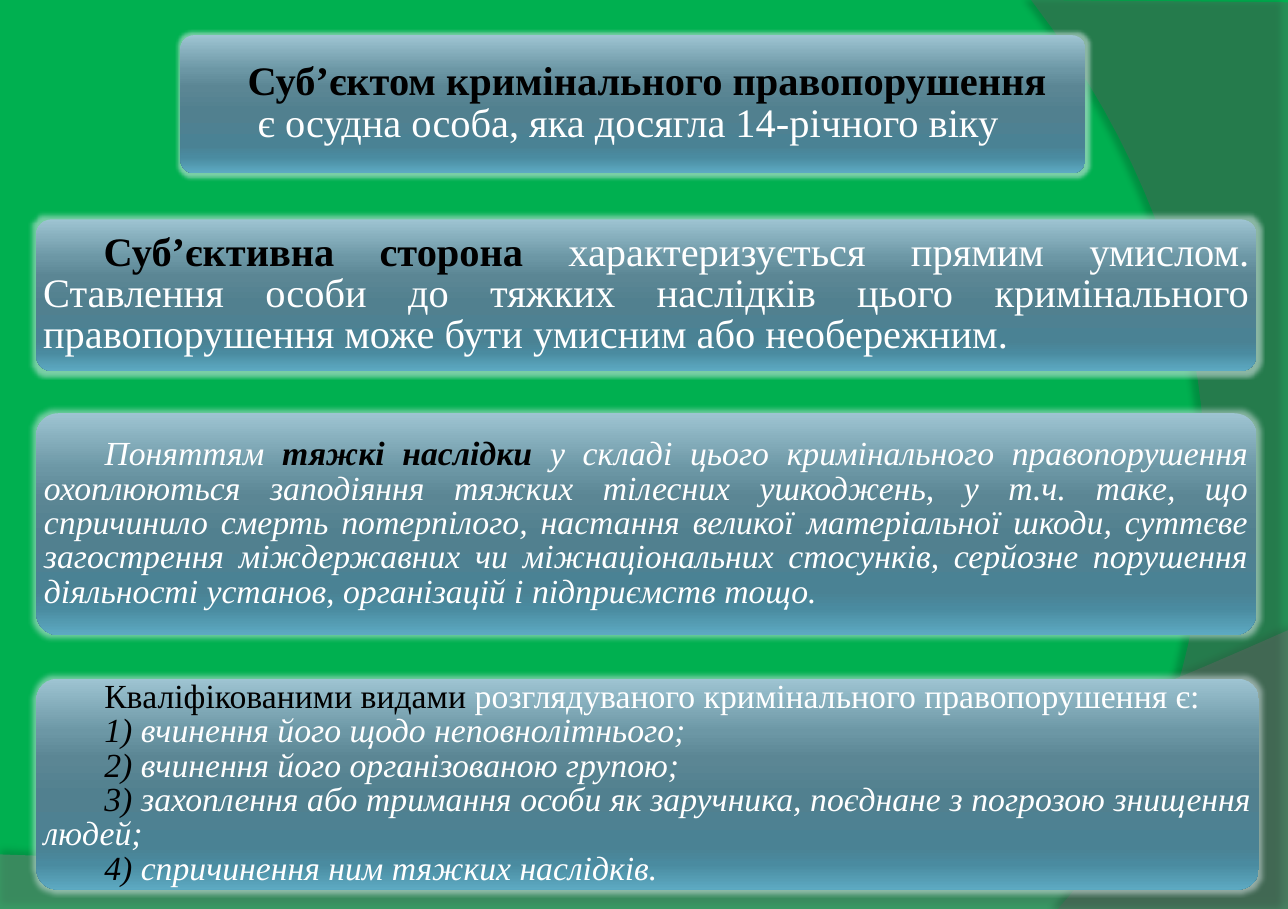
from lxml import etree
from pptx import Presentation
from pptx.dml.color import RGBColor
from pptx.enum.shapes import MSO_SHAPE
from pptx.enum.text import MSO_ANCHOR, PP_ALIGN
from pptx.oxml import parse_xml
from pptx.oxml.ns import nsdecls, qn
from pptx.util import Pt

ROUND = MSO_SHAPE.ROUNDED_RECTANGLE
MIDDLE = MSO_ANCHOR.MIDDLE
JUSTIFY = PP_ALIGN.JUSTIFY
WIDE, HIGH = 765.4, 540

COLORS = {"back": "00B050", "floor": "7F7F7F", "side": "5E5E5E",
          "shade": "000000", "glow": "DDE8EC", "key": "000000", "body": "FFFFFF"}
STOPS = {0: "9EC4D2", 25: "6C97A5", 38: "5B8694", 55: "51808F",
         80: "4A8294", 88: "4A8BA0", 100: "5DAAC2"}


def color_xml(color, alpha):
    return (f'<a:srgbClr val="{color}"><a:alpha val="{alpha * 1000}"/></a:srgbClr>')


def add_effect(shape, tag, attrs, color, alpha):
    shape.shadow.inherit = False
    effects = shape._element.spPr.find(qn("a:effectLst"))
    effects.append(parse_xml(f'<a:{tag} {nsdecls("a")} {attrs}>'
                             f'{color_xml(color, alpha)}</a:{tag}>'))


deck = Presentation()
deck.slide_width, deck.slide_height = Pt(WIDE), Pt(HIGH)
slide = deck.slides.add_slide(deck.slide_layouts[6])
slide.background.fill.solid()
slide.background.fill.fore_color.rgb = RGBColor.from_string(COLORS["back"])

# Curved backdrop: straight corners, then a Bezier from the last corner
waves = [
    ("floor", 45, [(0, 507.6), (0, HIGH), (WIDE, HIGH), (WIDE, 374.4)],
     [(427.7, 524.9), (298.8, 517.7), (0, 507.6)], 35, 3.5, 270),
    ("side", 40, [(WIDE, 1.4), (WIDE, HIGH), (628.6, HIGH)],
     [(715.7, 445.7), (779, 216), (612.7, 0)], 45, 4, 180),
]
STEPS = 40
for name, alpha, corners, curve, dark, dist, angle in waves:
    bend = [corners[-1]] + curve
    points = corners[1:]
    for step in range(1, STEPS + 1):
        t = step / STEPS
        parts = ((1 - t) ** 3, 3 * t * (1 - t) ** 2, 3 * t * t * (1 - t), t ** 3)
        points.append(tuple(sum(w * p[axis] for w, p in zip(parts, bend))
                            for axis in (0, 1)))
    build = slide.shapes.build_freeform(Pt(corners[0][0]), Pt(corners[0][1]))
    build.add_line_segments([(Pt(x), Pt(y)) for x, y in points], close=True)
    wave = build.convert_to_shape()
    wave.fill.solid()
    wave.fill.fore_color.rgb = RGBColor.from_string(COLORS[name])
    fill = wave._element.spPr.find(qn("a:solidFill"))
    etree.SubElement(fill[0], qn("a:alpha"), val=str(alpha * 1000))
    wave.line.fill.background()
    add_effect(wave, "outerShdw",
               f'blurRad="{Pt(4)}" dist="{Pt(dist)}" dir="{angle * 60000}"',
               COLORS["shade"], dark)

# Run formats
plain = {"bold": False, "italic": False}
bold = {"bold": True, "italic": False}
slant = {"bold": False, "italic": True}
strong = {"bold": True, "italic": True}

# Panels: place, text size, inset, paragraphs of (first indent, runs)
kinds = ["вчинення його щодо неповнолітнього;",
         "вчинення його організованою групою;",
         "захоплення або тримання особи як заручника, поєднане з погрозою "
         "знищення людей;",
         "спричинення ним тяжких наслідків."]
panels = [
    ((107.3, 20.9, 537.8, 82.1), 24, 1.44, [
        (36, [("Суб’єктом кримінального правопорушення", "key", bold)]),
        (42, [("є осудна особа, яка досягла 14-річного віку", "body", plain)])]),
    ((21.6, 130.3, 725, 90), 24, 1.44, [
        (36, [("Суб’єктивна сторона ", "key", bold),
              ("характеризується прямим умислом. Ставлення особи до тяжких "
               "наслідків цього кримінального правопорушення може бути умисним "
               "або необережним.", "body", plain)])]),
    ((21.6, 245.5, 725, 131.8), 20, 0.72, [
        (36, [("Поняттям ", "body", slant),
              ("тяжкі наслідки ", "key", strong),
              ("у складі цього кримінального правопорушення охоплюються "
               "заподіяння тяжких тілесних ушкоджень, у т.ч. таке, що "
               "спричинило смерть потерпілого, настання великої матеріальної "
               "шкоди, суттєве загострення міждержавних чи міжнаціональних "
               "стосунків, серйозне порушення діяльності установ, організацій "
               "і підприємств тощо.", "body", slant)])]),
    ((21.6, 403.2, 726.5, 125.3), 20, 0.72, [
        (36, [("Кваліфікованими видами", "key", plain),
              (" розглядуваного кримінального правопорушення є:", "body", plain)])]
     + [(36, [(f"{n}) ", "key", slant), (kind, "body", slant)])
        for n, kind in enumerate(kinds, 1)]),
]
for place, size, inset, paras in panels:
    panel = slide.shapes.add_shape(ROUND, *map(Pt, place))
    panel.adjustments[0] = 0.1
    panel.fill.gradient()
    panel.fill.gradient_angle = 270
    stops = panel._element.spPr.find(qn("a:gradFill")).find(qn("a:gsLst"))
    for stop in list(stops):
        stops.remove(stop)
    for spot, color in STOPS.items():
        stop = etree.SubElement(stops, qn("a:gs"), pos=str(spot * 1000))
        etree.SubElement(stop, qn("a:srgbClr"), val=color)
    panel.line.fill.background()
    add_effect(panel, "glow", f'rad="{Pt(5)}"', COLORS["glow"], 55)

    # Panel text
    frame = panel.text_frame
    frame.word_wrap = True
    frame.vertical_anchor = MIDDLE
    for side in ("left", "right", "top", "bottom"):
        setattr(frame, f"margin_{side}", Pt(inset))
    for row, (indent, runs) in enumerate(paras):
        para = frame.add_paragraph() if row else frame.paragraphs[0]
        para.alignment = JUSTIFY
        para.line_spacing = 0.85
        para._p.get_or_add_pPr().set("indent", str(Pt(indent)))
        for words, tone, style in runs:
            run = para.add_run()
            run.text = words
            look = {"name": "Times New Roman", "size": Pt(size), **style}
            for key, value in look.items():
                setattr(run.font, key, value)
            run.font.color.rgb = RGBColor.from_string(COLORS[tone])

deck.save("out.pptx")
